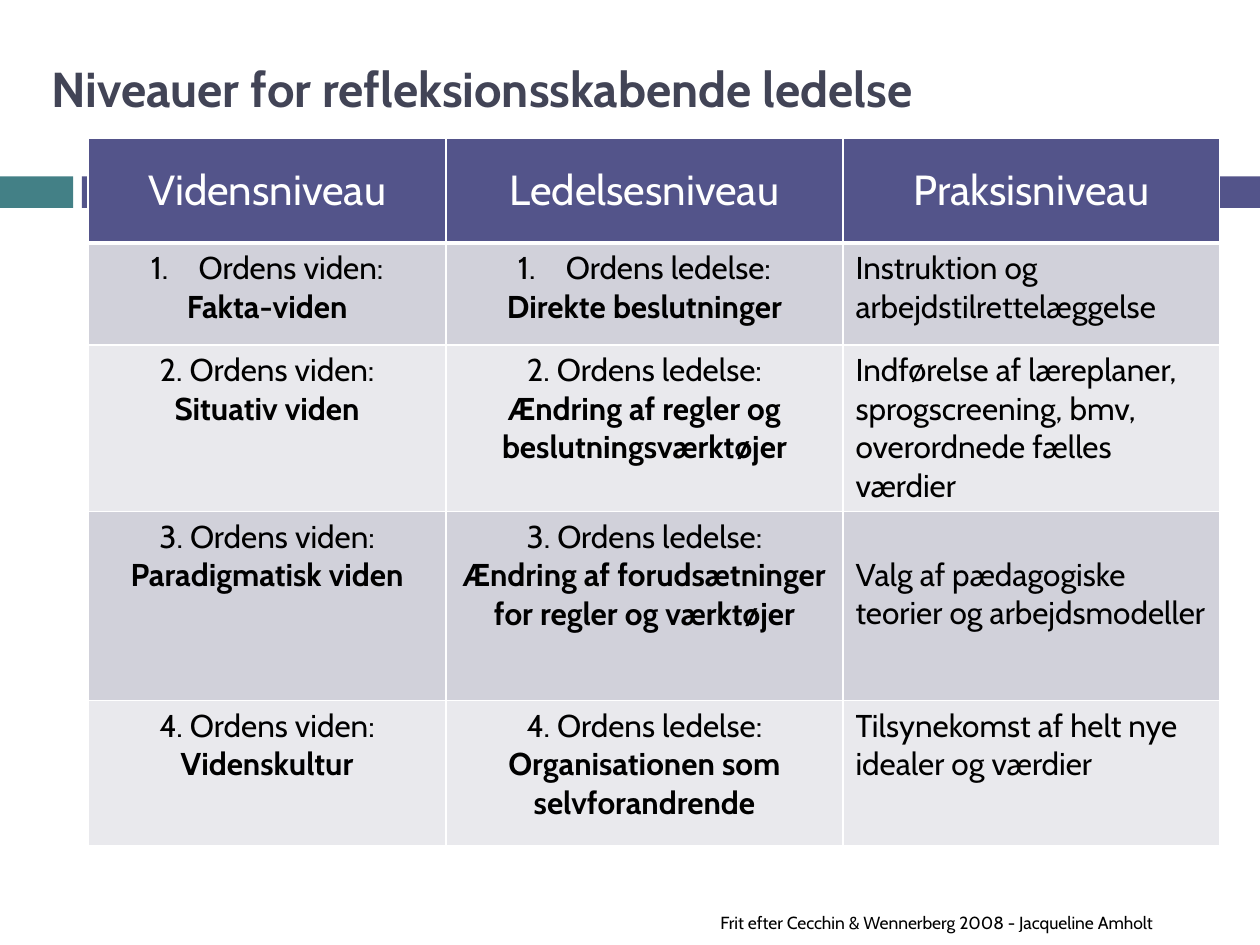
import pptx
import pptx.util
import pptx.dml.color
import pptx.enum.shapes
import pptx.enum.text
import pptx.oxml.ns
from lxml import etree
from pptx.util import Inches, Pt

FONT = "Cabin"
COLORS = {
    "teal": "438086", "purple": "53548A", "title": "424456", "white": "FFFFFF",
    "black": "000000", "band_dark": "D1D1DA", "band_light": "E9E9ED",
}
ALIGN = pptx.enum.text.PP_ALIGN
MIDDLE = pptx.enum.text.MSO_ANCHOR.MIDDLE


def rgb(name):
    return pptx.dml.color.RGBColor.from_string(COLORS[name])


def format_paragraph(paragraph, size, color, bold=False, align=ALIGN.LEFT):
    paragraph.alignment = align
    for run in paragraph.runs:
        run.font.name = FONT
        run.font.size = Pt(size)
        run.font.bold = bold
        run.font.color.rgb = rgb(color)


presentation = pptx.Presentation()
presentation.slide_width = Inches(10)
presentation.slide_height = Inches(7.5)
slide = presentation.slides.add_slide(presentation.slide_layouts[5])

# Title
title = slide.shapes.title
title.left, title.top = Inches(0.31), Inches(0.23)
title.width, title.height = Inches(9.38), Inches(0.94)
title.text_frame.text = "Niveauer for refleksionsskabende ledelse"
title.text_frame.vertical_anchor = MIDDLE
format_paragraph(title.text_frame.paragraphs[0], 28, "title", bold=True)

# Bars behind the table
for left, width, color in [(0, 0.58, "teal"), (0.65, 9.35, "purple")]:
    bar = slide.shapes.add_shape(
        pptx.enum.shapes.MSO_SHAPE.RECTANGLE,
        Inches(left), Inches(1.4), Inches(width), Inches(0.25))
    bar.shadow.inherit = False
    bar.fill.solid()
    bar.fill.fore_color.rgb = rgb(color)
    bar.line.fill.background()

# Table: knowledge and leadership cells have an order line and a bold line
headers = ["Vidensniveau", "Ledelsesniveau", "Praksisniveau"]
levels = [
    ("Fakta-viden", "Direkte beslutninger",
     "Instruktion og arbejdstilrettelæggelse"),
    ("Situativ viden", "Ændring af regler og beslutningsværktøjer",
     "Indførelse af læreplaner, sprogscreening, bmv, overordnede fælles værdier"),
    ("Paradigmatisk viden", "Ændring af forudsætninger for regler og værktøjer",
     "Valg af pædagogiske teorier og arbejdsmodeller"),
    ("Videnskultur", "Organisationen som selvforandrende",
     "Tilsynekomst af helt nye idealer og værdier"),
]
rows = [headers]
for number, (knowledge, leadership, practice) in enumerate(levels, start=1):
    prefix = "" if number == 1 else f"{number}. "
    rows.append([f"{prefix}Ordens viden:\n{knowledge}",
                 f"{prefix}Ordens ledelse:\n{leadership}", practice])

column_widths = [2.84, 3.15, 2.99]
row_heights = [0.83, 0.81, 1.32, 1.5, 1.15]
table = slide.shapes.add_table(
    len(rows), len(headers), Inches(0.7), Inches(1.1),
    Inches(sum(column_widths)), Inches(sum(row_heights))).table
for column, width in zip(table.columns, column_widths):
    column.width = Inches(width)
for row, height in zip(table.rows, row_heights):
    row.height = Inches(height)

for row_index, texts in enumerate(rows):
    for column_index, text in enumerate(texts):
        cell = table.cell(row_index, column_index)
        cell.text_frame.text = text

        # Borders, thicker under the header
        properties = cell._tc.get_or_add_tcPr()
        for side in "LRTB":
            header_edge = (row_index, side) in [(0, "B"), (1, "T")]
            line = etree.SubElement(
                properties, pptx.oxml.ns.qn(f"a:ln{side}"),
                w=str(Pt(3 if header_edge else 1)))
            solid = etree.SubElement(line, pptx.oxml.ns.qn("a:solidFill"))
            etree.SubElement(solid, pptx.oxml.ns.qn("a:srgbClr"), val=COLORS["white"])

        cell.fill.solid()
        if row_index == 0:
            cell.fill.fore_color.rgb = rgb("purple")
            cell.vertical_anchor = MIDDLE
            format_paragraph(cell.text_frame.paragraphs[0], 24, "white", align=ALIGN.CENTER)
            continue

        cell.fill.fore_color.rgb = rgb("band_dark" if row_index % 2 else "band_light")
        align = ALIGN.LEFT if column_index == 2 else ALIGN.CENTER
        for line_index, paragraph in enumerate(cell.text_frame.paragraphs):
            format_paragraph(paragraph, 18, "black", line_index == 1, align)
            # The first level is an automatically numbered list
            if row_index == 1 and column_index < 2:
                paragraph_properties = paragraph._p.get_or_add_pPr()
                paragraph_properties.set("marL", str(Inches(0.38)))
                paragraph_properties.set("indent", str(Inches(-0.38)))
                if line_index == 0:
                    etree.SubElement(paragraph_properties, pptx.oxml.ns.qn("a:buAutoNum"),
                                     type="arabicPeriod")

# The third practice text starts one line lower
table.cell(3, 2).margin_top = Inches(0.35)

# Source note
note = slide.shapes.add_textbox(Inches(5.62), Inches(7.19), Inches(3.83), Inches(0.27))
note.text_frame.word_wrap = True
note.text_frame.text = "Frit efter Cecchin & Wennerberg 2008 - Jacqueline Amholt"
format_paragraph(note.text_frame.paragraphs[0], 10, "black")

presentation.save("out.pptx")
